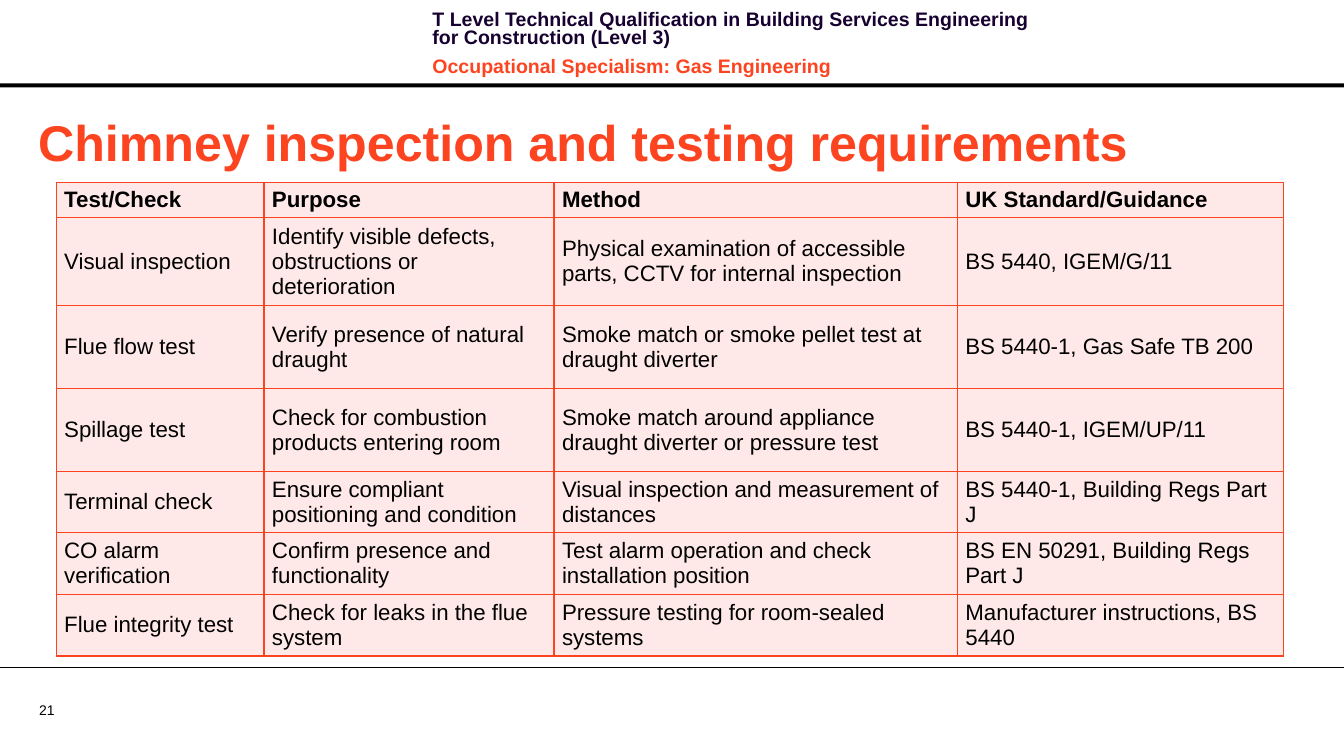
import lxml.etree
import pptx
import pptx.dml.color
import pptx.enum.shapes
import pptx.enum.text
import pptx.oxml.ns
import pptx.util

INK, NAVY, ORANGE, BLUSH = "000000", "170130", "FC4421", "FEE9E8"

HEADER = [
    ("T Level Technical Qualification in Building Services Engineering "
     "for Construction (Level 3)", NAVY),
    ("Occupational Specialism: Gas Engineering", ORANGE),
]

CHECKS = [
    ("Test/Check", "Purpose", "Method", "UK Standard/Guidance"),
    ("Visual inspection", "Identify visible defects, obstructions or deterioration",
     "Physical examination of accessible parts, CCTV for internal inspection",
     "BS 5440, IGEM/G/11"),
    ("Flue flow test", "Verify presence of natural draught",
     "Smoke match or smoke pellet test at draught diverter",
     "BS 5440-1, Gas Safe TB 200"),
    ("Spillage test", "Check for combustion products entering room",
     "Smoke match around appliance draught diverter or pressure test",
     "BS 5440-1, IGEM/UP/11"),
    ("Terminal check", "Ensure compliant positioning and condition",
     "Visual inspection and measurement of distances",
     "BS 5440-1, Building Regs Part J"),
    ("CO alarm verification", "Confirm presence and functionality",
     "Test alarm operation and check installation position",
     "BS EN 50291, Building Regs Part J"),
    ("Flue integrity test", "Check for leaks in the flue system",
     "Pressure testing for room-sealed systems",
     "Manufacturer instructions, BS 5440"),
]
COLUMN_WIDTHS = [15.46, 21.58, 30.02, 24.27]
ROW_HEIGHTS = [4.41] + [11.02] * 3 + [7.73] * 3


def rgb(hex_string):
    return pptx.dml.color.RGBColor.from_string(hex_string)


class SlideBuilder:
    """Draws on one slide; lengths are percentages of its width and height."""

    font = "Arial"
    middle = pptx.enum.text.MSO_ANCHOR.MIDDLE

    def __init__(self, prs):
        self.prs = prs
        self.slide = prs.slides.add_slide(prs.slide_layouts[5])

    def x(self, share):
        return round(self.prs.slide_width * share / 100)

    def y(self, share):
        return round(self.prs.slide_height * share / 100)

    def box(self, left, top, width, height):
        return self.x(left), self.y(top), self.x(width), self.y(height)

    def format_runs(self, p, size, color, bold=False):
        for r in p.runs:
            r.font.name = self.font
            r.font.size = pptx.util.Pt(size)
            r.font.bold = bold
            r.font.color.rgb = rgb(color)

    def title(self, text, box, size, color):
        sp = self.slide.shapes.title
        sp.left, sp.top, sp.width, sp.height = self.box(*box)
        tf = sp.text_frame
        tf.text = text
        tf.word_wrap = True
        tf.auto_size = pptx.enum.text.MSO_AUTO_SIZE.NONE
        tf.vertical_anchor = self.middle
        p = tf.paragraphs[0]
        p.alignment = pptx.enum.text.PP_ALIGN.LEFT
        self.format_runs(p, size, color, True)

    def text(self, lines, box, size, bold=False, inset=True, leading=None, gap=0):
        """Add a text box; lines are (text, colour) pairs, leading and gap are points."""
        tf = self.slide.shapes.add_textbox(*self.box(*box)).text_frame
        tf.word_wrap = True
        if not inset:
            tf.margin_left = tf.margin_right = tf.margin_top = tf.margin_bottom = 0
            tf.vertical_anchor = self.middle
        for i, (line, color) in enumerate(lines):
            p = tf.add_paragraph() if i else tf.paragraphs[0]
            p.text = line
            if leading:
                p.line_spacing = pptx.util.Pt(leading)
            if i:
                p.space_before = pptx.util.Pt(gap)
            p.space_after = pptx.util.Pt(gap)
            self.format_runs(p, size, color, bold)

    def bar(self, box, color):
        sp = self.slide.shapes.add_shape(
            pptx.enum.shapes.MSO_SHAPE.RECTANGLE, *self.box(*box))
        sp.shadow.inherit = False
        sp.fill.solid()
        sp.fill.fore_color.rgb = rgb(color)
        sp.line.fill.background()

    def rule(self, top, color, weight):
        line = self.slide.shapes.add_connector(
            pptx.enum.shapes.MSO_CONNECTOR.STRAIGHT,
            0, self.y(top), self.x(100), self.y(top))
        line.line.color.rgb = rgb(color)
        line.line.width = pptx.util.Pt(weight)
        lxml.etree.SubElement(line._element.spPr, pptx.oxml.ns.qn("a:effectLst"))

    def cell_borders(self, cell, color, weight):
        tcPr = cell._tc.get_or_add_tcPr()
        for side in ("lnL", "lnR", "lnT", "lnB"):
            ln = lxml.etree.SubElement(tcPr, pptx.oxml.ns.qn(f"a:{side}"),
                                       w=str(pptx.util.Pt(weight)))
            fill = lxml.etree.SubElement(ln, pptx.oxml.ns.qn("a:solidFill"))
            lxml.etree.SubElement(fill, pptx.oxml.ns.qn("a:srgbClr"), val=color)

    def table(self, rows, left, top, widths, heights, size):
        box = self.box(left, top, sum(widths), sum(heights))
        table = self.slide.shapes.add_table(len(rows), len(widths), *box).table
        table.horz_banding = False
        for column, width in zip(table.columns, widths):
            column.width = self.x(width)
        for i, (row, height) in enumerate(zip(rows, heights)):
            table.rows[i].height = self.y(height)
            for j, text in enumerate(row):
                cell = table.cell(i, j)
                self.cell_borders(cell, ORANGE, 1)
                cell.fill.solid()
                cell.fill.fore_color.rgb = rgb(BLUSH)
                cell.margin_left = cell.margin_right = pptx.util.Inches(0.08)
                cell.margin_top = cell.margin_bottom = pptx.util.Inches(0.04)
                cell.vertical_anchor = self.middle
                cell.text_frame.text = text
                self.format_runs(cell.text_frame.paragraphs[0], size, INK, i == 0)


def main():
    prs = pptx.Presentation()
    prs.slide_width = pptx.util.Inches(13.39)
    prs.slide_height = pptx.util.Inches(7.48)
    s = SlideBuilder(prs)
    s.bar((0, 11.1, 100, 0.53), INK)
    s.text([("21", INK)], (2.91, 93.45, 4.78, 2.27), 10, inset=False)
    s.rule(88.9, INK, 0.75)
    s.text(HEADER, (31.44, 0.94, 47.57, 8.56), 14, bold=True, leading=13.1, gap=4)
    s.title("Chimney inspection and testing requirements",
            (2.09, 14.04, 95, 9.49), 36, ORANGE)
    s.table(CHECKS, 4.18, 24.33, COLUMN_WIDTHS, ROW_HEIGHTS, 16)
    prs.save("out.pptx")


if __name__ == "__main__":
    main()
